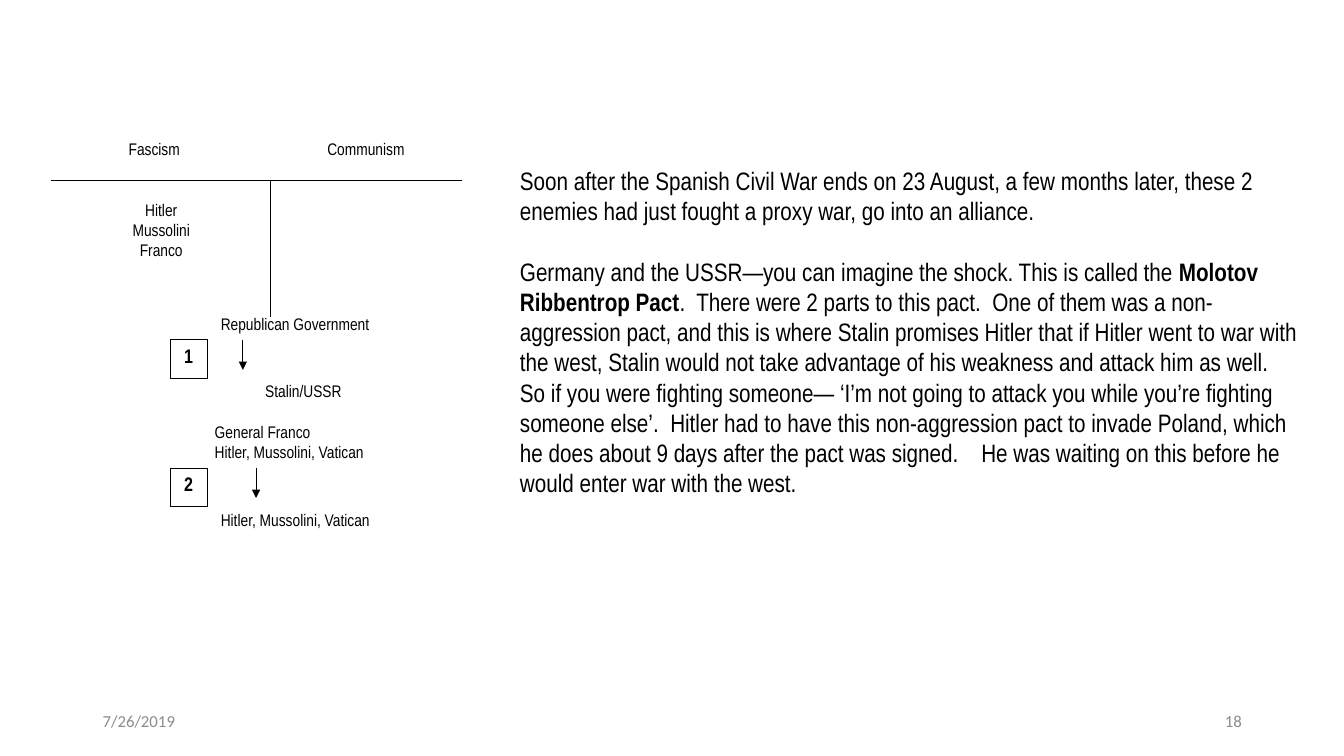
import pptx
import pptx.util
import pptx.dml.color
import pptx.enum.shapes
import pptx.enum.text
import pptx.oxml.ns
from lxml import etree

Pt = pptx.util.Pt
RGBColor = pptx.dml.color.RGBColor
ALIGN = pptx.enum.text.PP_ALIGN
ANCHOR = pptx.enum.text.MSO_ANCHOR

BLACK = RGBColor(0, 0, 0)
GRAY = RGBColor(0x8C, 0x8C, 0x8C)
NARROW = "Arial Narrow"
BODY_INSET = (7.2, 3.6)
LABEL_INSET = (2.9, 2.9)

# Each paragraph is a list of (text, bold) spans.
STORY = [
    [("Soon after the Spanish Civil War ends on 23 August, a few months later, these 2 "
      "enemies had just fought a proxy war, go into an alliance.", False)],
    [("Germany and the USSR—you can imagine the shock. This is called the ", False),
     ("Molotov Ribbentrop Pact", True),
     (".  There were 2 parts to this pact.  One of them was a non-aggression pact, and "
      "this is where Stalin promises Hitler that if Hitler went to war with the west, "
      "Stalin would not take advantage of his weakness and attack him as well.  So if you "
      "were fighting someone— ‘I’m not going to attack you while you’re fighting someone "
      "else’.  Hitler had to have this non-aggression pact to invade Poland, which he does "
      "about 9 days after the pact was signed.    He was waiting on this before he would "
      "enter war with the west.", False)],
]
# Lines, (left, top, width, height), alignment
LABELS = [
    (["Fascism"], (41.8, 96.5, 136.8, 28), ALIGN.CENTER),
    (["Communism"], (193, 96.5, 136.8, 28), ALIGN.CENTER),
    (["Hitler", "Mussolini", "Franco"], (46.8, 139.7, 136.8, 59.8), ALIGN.CENTER),
    (["Republican Government"], (154.8, 221, 183.6, 27.4), ALIGN.LEFT),
    (["\tStalin/USSR", "General Franco", "Hitler, Mussolini, Vatican"],
     (150.5, 269.3, 174.2, 59.8), ALIGN.LEFT),
    (["Hitler, Mussolini, Vatican"], (154.8, 361.4, 183.6, 32.4), ALIGN.LEFT),
]
FOOTERS = [("7/26/2019", 66.2, ALIGN.LEFT), ("18", 678.2, ALIGN.RIGHT)]
# Number, top, arrow x
STEPS = [("1", 242.6, 173.5), ("2", 334.1, 182.9)]
ARROW_LENGTH = 21.6
T_LEFT, T_RIGHT, T_TOP = 36.7, 329.8, 128.9
STEM_X, STEM_BOTTOM = 193, 226.1


def write(box, paragraphs, size, font=NARROW, color=BLACK, align=ALIGN.LEFT,
          inset=LABEL_INSET, anchor=ANCHOR.TOP):
    """Fill a box with paragraphs, each a list of (text, bold) spans."""
    frame = box.text_frame
    frame.word_wrap = True
    frame.vertical_anchor = anchor
    frame.margin_left = frame.margin_right = Pt(inset[0])
    frame.margin_top = frame.margin_bottom = Pt(inset[1])
    for index, spans in enumerate(paragraphs):
        para = frame.add_paragraph() if index else frame.paragraphs[0]
        para.alignment = align
        for text, bold in spans:
            span = para.add_run()
            span.text = text
            span.font.name = font
            span.font.size = Pt(size)
            span.font.bold = bold
            span.font.color.rgb = color


def add_text(page, place, paragraphs, size, **style):
    box = page.shapes.add_textbox(*map(Pt, place))
    write(box, paragraphs, size, **style)
    return box


def add_line(page, x1, y1, x2, y2, arrow=False):
    line = page.shapes.add_connector(
        pptx.enum.shapes.MSO_CONNECTOR.STRAIGHT, Pt(x1), Pt(y1), Pt(x2), Pt(y2))
    line.line.color.rgb = BLACK
    line.line.width = Pt(0.75)
    if arrow:
        tail = etree.SubElement(line.line._get_or_add_ln(), pptx.oxml.ns.qn("a:tailEnd"))
        tail.set("type", "triangle")
    etree.SubElement(line._element.spPr, pptx.oxml.ns.qn("a:effectLst"))


def add_step(page, number, top, arrow_x):
    box = page.shapes.add_shape(pptx.enum.shapes.MSO_SHAPE.RECTANGLE,
                                Pt(121.7), Pt(top), Pt(26), Pt(27.4))
    box.shadow.inherit = False
    box.fill.background()
    box.line.color.rgb = BLACK
    box.line.width = Pt(0.25)
    write(box, [[(number, True)]], 14, align=ALIGN.CENTER)
    add_line(page, arrow_x, top, arrow_x, top + ARROW_LENGTH, arrow=True)


def main():
    deck = pptx.Presentation()
    deck.slide_width, deck.slide_height = Pt(960), Pt(540)
    page = deck.slides.add_slide(deck.slide_layouts[6])

    for text, left, align in FOOTERS:
        add_text(page, (left, 500.4, 216, 28.8), [[(text, False)]], 12, font="Calibri",
                 color=GRAY, align=align, inset=BODY_INSET, anchor=ANCHOR.MIDDLE)

    story = add_text(page, (364.3, 114.5, 572.4, 262), STORY, 18, inset=BODY_INSET)
    story.text_frame.paragraphs[1].space_before = Pt(21.6)

    add_line(page, T_LEFT, T_TOP, T_RIGHT, T_TOP)
    add_line(page, STEM_X, T_TOP, STEM_X, STEM_BOTTOM)
    for lines, place, align in LABELS:
        label = add_text(page, place, [[(line, False)] for line in lines], 12, align=align)
        if lines[0].startswith("\t"):
            label.text_frame.paragraphs[1].space_before = Pt(14.4)
    for step in STEPS:
        add_step(page, *step)

    deck.save("out.pptx")


if __name__ == "__main__":
    main()
